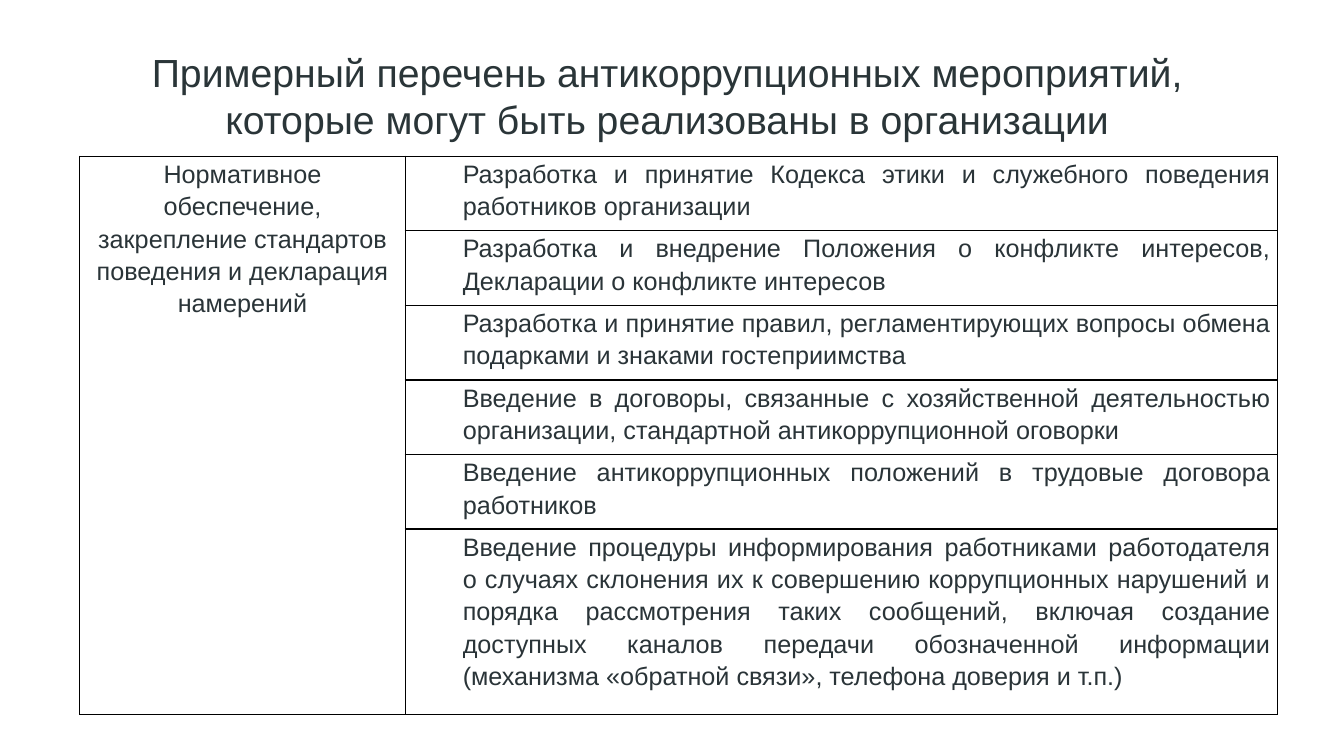
from dataclasses import dataclass

from lxml import etree
from pptx import Presentation
from pptx.dml.color import RGBColor
from pptx.enum.text import MSO_ANCHOR, PP_ALIGN
from pptx.oxml.ns import qn
from pptx.table import Table, _Cell
from pptx.text.text import TextFrame
from pptx.util import Inches, Length, Pt

CENTER, JUSTIFY = PP_ALIGN.CENTER, PP_ALIGN.JUSTIFY
MIDDLE, TOP = MSO_ANCHOR.MIDDLE, MSO_ANCHOR.TOP


@dataclass(frozen=True)
class Theme:
    font: str = "Arial"
    title_color: str = "2A3538"
    body_color: str = "2A3438"
    border_color: str = "000000"
    title_size: Length = Pt(28)
    body_size: Length = Pt(18)
    border_width: Length = Pt(1)


@dataclass(frozen=True)
class Measure:
    text: str
    height: float = 0.74


THEME = Theme()
TITLE = ("Примерный перечень антикоррупционных мероприятий, "
         "которые могут быть реализованы в организации")
DIRECTION = ("Нормативное обеспечение, закрепление стандартов "
             "поведения и декларация намерений")
MEASURES = [
    Measure("Разработка и принятие Кодекса этики и служебного поведения "
            "работников организации"),
    Measure("Разработка и внедрение Положения о конфликте интересов, "
            "Декларации о конфликте интересов"),
    Measure("Разработка и принятие правил, регламентирующих вопросы обмена "
            "подарками и знаками гостеприимства"),
    Measure("Введение в договоры, связанные с хозяйственной деятельностью "
            "организации, стандартной антикоррупционной оговорки"),
    Measure("Введение антикоррупционных положений в трудовые договора "
            "работников"),
    Measure("Введение процедуры информирования работниками работодателя "
            "о случаях склонения их к совершению коррупционных нарушений и "
            "порядка рассмотрения таких сообщений, включая создание доступных "
            "каналов передачи обозначенной информации (механизма «обратной "
            "связи», телефона доверия и т.п.)", height=1.84),
]
COLUMN_WIDTHS = (3.23, 8.65)
LEFT = 0.79
TABLE_TOP = 1.55


def write_text(frame: TextFrame, text: str, *, size: Length, color: str,
               align: PP_ALIGN, line_spacing: float = 1.0,
               indent: float = 0) -> None:
    paragraph = frame.paragraphs[0]
    paragraph.alignment = align
    paragraph.line_spacing = line_spacing
    if indent:
        properties = paragraph._p.get_or_add_pPr()
        properties.set("marL", str(Inches(indent)))
        properties.set("indent", "0")
    run = paragraph.add_run()
    run.text = text
    run.font.name = THEME.font
    run.font.size = size
    run.font.color.rgb = RGBColor.from_string(color)


def outline_cell(cell: _Cell) -> None:
    """Draw all four borders; must run before the cell's fill is set."""
    properties = cell._tc.get_or_add_tcPr()
    for side in ("a:lnL", "a:lnR", "a:lnT", "a:lnB"):
        border = etree.SubElement(properties, qn(side), w=str(THEME.border_width))
        fill = etree.SubElement(border, qn("a:solidFill"))
        etree.SubElement(fill, qn("a:srgbClr"), val=THEME.border_color)


def format_cells(table: Table) -> None:
    for cell in table.iter_cells():
        cell.margin_left = cell.margin_right = Inches(0.07)
        cell.margin_top = cell.margin_bottom = 0
        cell.vertical_anchor = TOP
        outline_cell(cell)
        cell.fill.background()


def add_title(slide) -> None:
    frame = slide.shapes.add_textbox(
        Inches(LEFT), Inches(0.35), Inches(11.65), Inches(1.2)).text_frame
    frame.word_wrap = True
    frame.vertical_anchor = MIDDLE
    frame.margin_left = frame.margin_right = Inches(0.03)
    frame.margin_top = frame.margin_bottom = Inches(0.03)
    write_text(frame, TITLE, size=THEME.title_size, color=THEME.title_color,
               align=CENTER)


def add_measures_table(slide) -> None:
    total_height = sum(measure.height for measure in MEASURES)
    table = slide.shapes.add_table(
        len(MEASURES), len(COLUMN_WIDTHS), Inches(LEFT), Inches(TABLE_TOP),
        Inches(sum(COLUMN_WIDTHS)), Inches(total_height)).table
    table.first_row = table.horz_banding = False
    for column, width in zip(table.columns, COLUMN_WIDTHS):
        column.width = Inches(width)
    format_cells(table)

    direction_cell = table.cell(0, 0)
    direction_cell.merge(table.cell(len(MEASURES) - 1, 0))
    body = dict(size=THEME.body_size, color=THEME.body_color, line_spacing=1.15)
    write_text(direction_cell.text_frame, DIRECTION, align=CENTER, **body)
    for index, measure in enumerate(MEASURES):
        table.rows[index].height = Inches(measure.height)
        write_text(table.cell(index, 1).text_frame, measure.text,
                   align=JUSTIFY, indent=0.5, **body)


def main() -> None:
    presentation = Presentation()
    presentation.slide_width = Inches(13.33)
    presentation.slide_height = Inches(7.5)
    slide = presentation.slides.add_slide(presentation.slide_layouts[6])
    add_title(slide)
    add_measures_table(slide)
    presentation.save("out.pptx")


if __name__ == "__main__":
    main()
